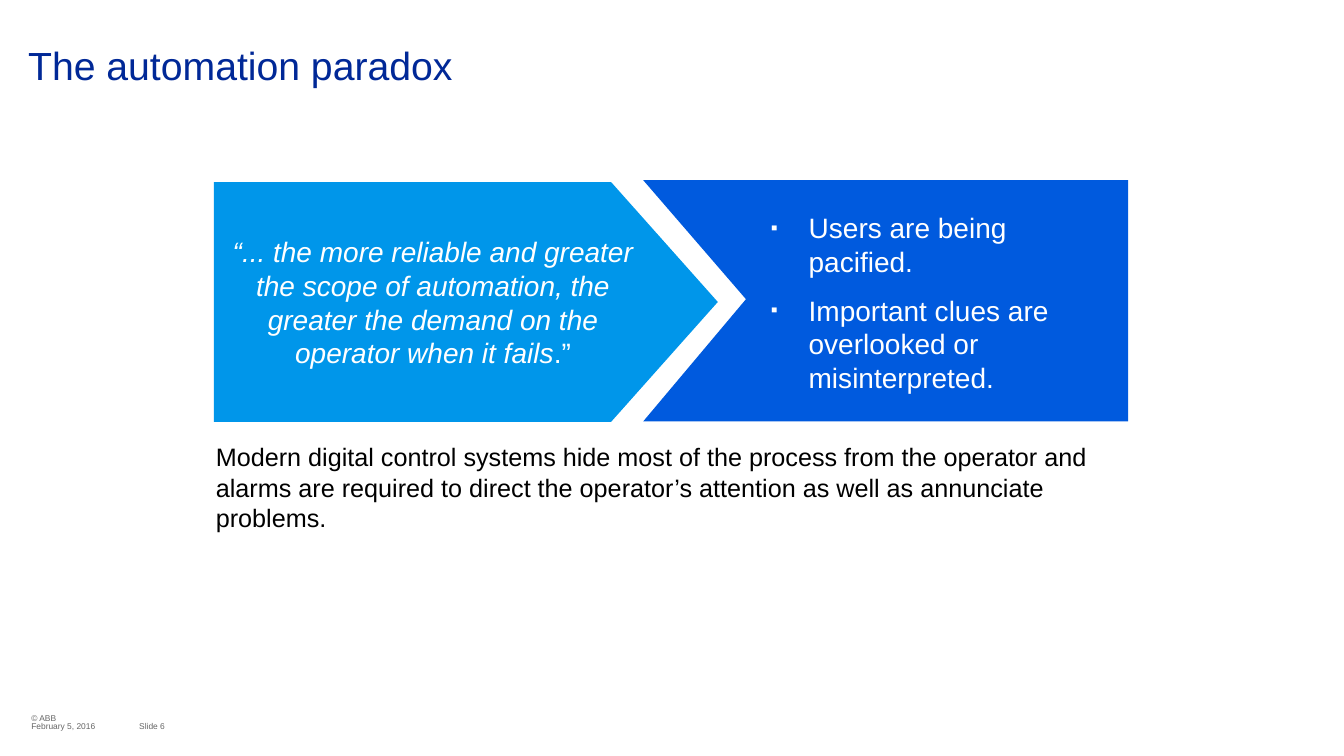
"""Build the slide on the automation paradox."""
from dataclasses import dataclass

from lxml.etree import SubElement
from pptx import Presentation
from pptx.dml.color import RGBColor
from pptx.enum.shapes import MSO_SHAPE
from pptx.enum.text import MSO_ANCHOR, PP_ALIGN
from pptx.oxml.ns import qn
from pptx.util import Cm, Pt

COLORS = {
    "title": "002897",
    "quote": "0096EA",
    "effect": "005ADE",
    "footer": "666666",
    "body": "000000",
    "white": "FFFFFF",
}


@dataclass
class Label:
    text: str
    left: float
    top: float
    width: float
    height: float
    size: float
    color: str
    insets: tuple[float, ...] = (0, 0, 0, 0)
    anchor: MSO_ANCHOR = MSO_ANCHOR.TOP
    align: PP_ALIGN = PP_ALIGN.LEFT
    wrap: bool = True
    italic: bool = False
    bullet: str = ""
    line_spacing: float | None = None
    tail: str = ""


def add_bullet(p, char: str, color: str) -> None:
    pPr = p._p.get_or_add_pPr()
    pPr.set("marL", str(Cm(0.95)))
    pPr.set("indent", str(-Cm(0.95)))
    SubElement(SubElement(pPr, qn("a:buClr")), qn("a:srgbClr"), val=COLORS[color])
    SubElement(pPr, qn("a:buSzPct"), val="70000")
    SubElement(pPr, qn("a:buFont"), typeface="Arial")
    SubElement(pPr, qn("a:buChar"), char=char)


def add_label(slide, text: str, **fmt) -> None:
    label = Label(text, **fmt)
    box = slide.shapes.add_textbox(
        Cm(label.left), Cm(label.top), Cm(label.width), Cm(label.height))
    tf = box.text_frame
    tf.word_wrap = label.wrap
    tf.vertical_anchor = label.anchor
    (tf.margin_left, tf.margin_top,
     tf.margin_right, tf.margin_bottom) = map(Cm, label.insets)
    for i, line in enumerate(label.text.split("\n")):
        p = tf.add_paragraph() if i else tf.paragraphs[0]
        if label.bullet:
            add_bullet(p, label.bullet, label.color)
        p.alignment = label.align
        if label.line_spacing:
            p.line_spacing = label.line_spacing
        if i:
            p.space_before = Pt(11)
        for part, italic in ((line, label.italic), (label.tail, False)):
            if part:
                r = p.add_run()
                r.text = part
                r.font.name = "Arial"
                r.font.size = Pt(label.size)
                r.font.italic = italic
                r.font.color.rgb = RGBColor.from_string(COLORS[label.color])


def paint(sp, color: str) -> None:
    sp.shadow.inherit = False
    sp.fill.solid()
    sp.fill.fore_color.rgb = RGBColor.from_string(COLORS[color])
    sp.line.fill.background()


def add_arrows(slide) -> None:
    left, right, top, bottom = Cm(16.21), Cm(28.43), Cm(4.54), Cm(10.62)
    builder = slide.shapes.build_freeform(right, top)
    builder.add_line_segments(
        [(left, top), (Cm(18.8), Cm(7.54)), (left, bottom), (right, bottom)])
    paint(builder.convert_to_shape(), "effect")
    sp = slide.shapes.add_shape(
        MSO_SHAPE.PENTAGON, Cm(5.39), Cm(4.59), Cm(12.7), Cm(6.04))
    sp.adjustments[0] = 0.445
    paint(sp, "quote")


def main() -> None:
    prs = Presentation()
    prs.slide_width, prs.slide_height = Cm(33.87), Cm(19.05)
    slide = prs.slides.add_slide(prs.slide_layouts[6])
    footer = dict(size=6, color="footer")
    panel = dict(top=4.6, height=6.03, size=20, color="white",
                 insets=(0.2, 0.2, 0.2, 0.2), anchor=MSO_ANCHOR.MIDDLE)

    add_label(slide, "© ABB", left=0.79, top=17.96, width=4.11, height=0.25,
              wrap=False, **footer)
    add_label(slide, "Slide 6", left=3.51, top=18.16, width=1.78, height=0.28,
              anchor=MSO_ANCHOR.MIDDLE, **footer)
    add_label(slide, "February 5, 2016", left=0.79, top=18.16, width=2.67,
              height=0.28, anchor=MSO_ANCHOR.MIDDLE,
              insets=(0, 0.2, 0.2, 0.2), **footer)
    add_arrows(slide)
    add_label(slide, "Modern digital control systems hide most of the process "
              "from the operator and alarms are required to direct the "
              "operator’s attention as well as annunciate problems.",
              left=5.44, top=11.13, width=22.96, height=5.99, size=18, color="body")
    add_label(slide, "The automation paradox", left=0, top=0, width=33.87,
              height=4.52, size=28, color="title", insets=(0.71, 1.3, 0.71, 0),
              line_spacing=0.9)
    add_label(slide, "Users are being pacified.\n"
              "Important clues are overlooked or misinterpreted.",
              left=19.23, width=9.14, bullet="▪", **panel)
    add_label(slide, "“... the more reliable and greater the scope of automation, "
              "the greater the demand on the operator when it fails",
              left=5.44, width=10.95, align=PP_ALIGN.CENTER, italic=True,
              tail=".”", **panel)
    prs.save("out.pptx")


if __name__ == "__main__":
    main()
